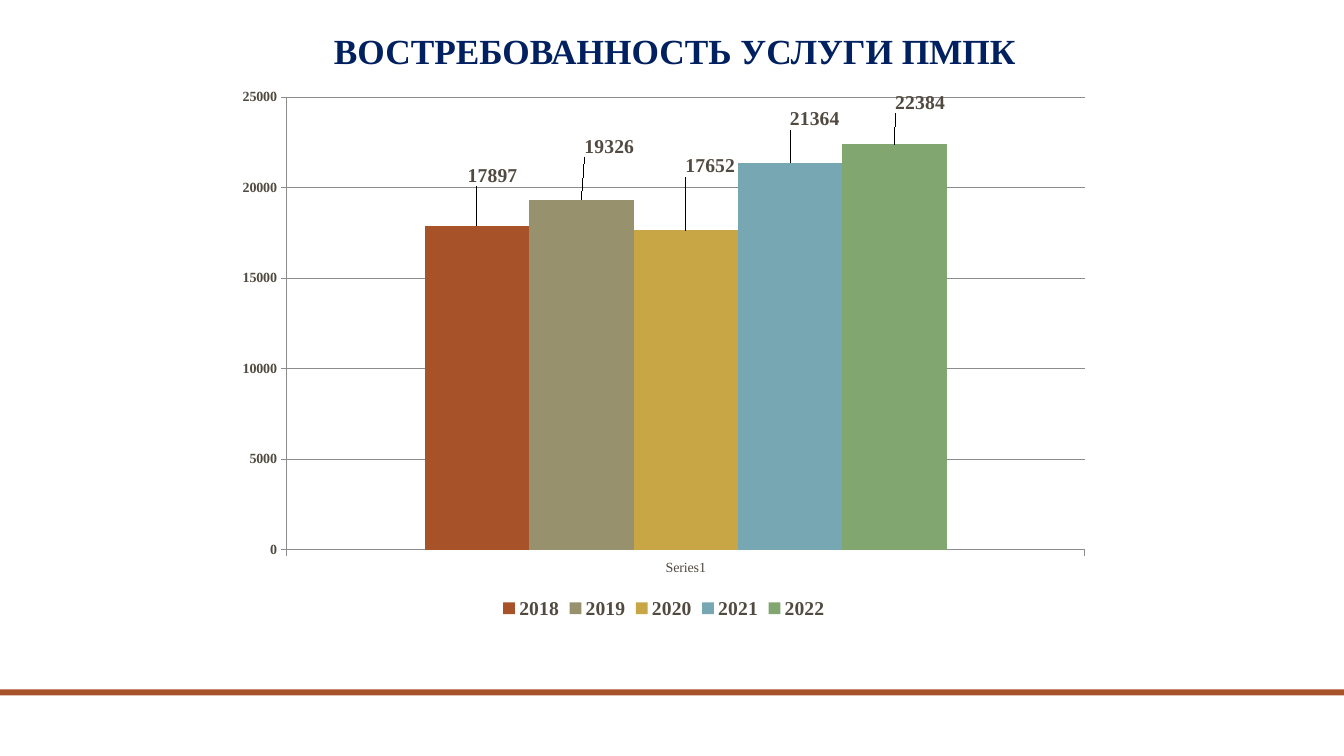
from lxml.etree import fromstring
from pptx import Presentation
from pptx.chart.data import CategoryChartData
from pptx.dml.color import RGBColor
from pptx.enum.chart import XL_CHART_TYPE, XL_LABEL_POSITION, XL_LEGEND_POSITION, XL_TICK_MARK
from pptx.enum.shapes import MSO_SHAPE
from pptx.enum.text import MSO_ANCHOR, PP_ALIGN
from pptx.oxml.ns import nsdecls
from pptx.util import Inches, Pt

COLORS = {"title": "002060", "rust": "A85229", "text": "514A40", "axis": "8C8C8C"}
FONT_NAME = "Times New Roman"
DEMAND = [
    ("2018", 17897, "A85229", 0.018, -0.064),
    ("2019", 19326, "98916E", 0.032, -0.07),
    ("2020", 17652, "C9A645", 0.028, -0.09),
    ("2021", 21364, "76A7B2", 0.028, -0.053),
    ("2022", 22384, "82A670", 0.029, -0.05),
]


def format_font(font, size, color, bold):
    values = {"name": FONT_NAME, "size": Pt(size), "bold": bold}
    for name, value in values.items():
        setattr(font, name, value)
    font.color.rgb = RGBColor.from_string(COLORS[color])


def make_layout(inner=False, **lengths):
    target = '<c:layoutTarget val="inner"/>' if inner else ""
    modes = "" if "w" not in lengths else '<c:xMode val="edge"/><c:yMode val="edge"/>'
    sizes = "".join(f'<c:{name} val="{value}"/>' for name, value in lengths.items())
    return fromstring(
        f'<c:layout {nsdecls("c")}><c:manualLayout>{target}{modes}{sizes}'
        "</c:manualLayout></c:layout>"
    )


deck = Presentation()
deck.slide_width = Inches(13.33)
deck.slide_height = Inches(7.5)
page = deck.slides.add_slide(deck.slide_layouts[5])

stripe = page.shapes.add_shape(
    MSO_SHAPE.RECTANGLE, Inches(0), Inches(6.84), Inches(13.33), Inches(0.06)
)
stripe.shadow.inherit = False
stripe.fill.solid()
stripe.fill.fore_color.rgb = RGBColor.from_string(COLORS["rust"])
stripe.line.fill.background()

title = page.shapes.title
title_place = {"left": 2.57, "top": 0.31, "width": 8.25, "height": 0.46}
for name, value in title_place.items():
    setattr(title, name, Inches(value))
frame = title.text_frame
frame_format = {
    "word_wrap": True, "vertical_anchor": MSO_ANCHOR.BOTTOM,
    "margin_top": Inches(0.05), "margin_bottom": Inches(0.05),
}
for name, value in frame_format.items():
    setattr(frame, name, value)
para = frame.paragraphs[0]
para.alignment = PP_ALIGN.CENTER
para.line_spacing = 0.9
span = para.add_run()
span.text = "ВОСТРЕБОВАННОСТЬ УСЛУГИ ПМПК"
format_font(span.font, 25.2, "title", True)

chart_data = CategoryChartData()
chart_data.categories = ["Series1"]
for year, count, *_ in DEMAND:
    chart_data.add_series(year, [count])
chart = page.shapes.add_chart(
    XL_CHART_TYPE.COLUMN_CLUSTERED,
    Inches(2.23), Inches(0.77), Inches(8.71), Inches(5.42), chart_data,
).chart
chart.has_title = False
format_font(chart.font, 10, "text", False)
plot = chart.plots[0]
plot.vary_by_categories = False
plot.gap_width = 264
plot.overlap = 0

value_axis = chart.value_axis
axis_format = {
    "minimum_scale": 0, "maximum_scale": 25000, "major_unit": 5000,
    "has_major_gridlines": True,
}
for name, value in axis_format.items():
    setattr(value_axis, name, value)
format_font(value_axis.tick_labels.font, 10, "text", True)
format_font(chart.category_axis.tick_labels.font, 10, "text", False)
for axis in (value_axis, chart.category_axis):
    axis.major_tick_mark = XL_TICK_MARK.OUTSIDE
for lined in (value_axis, chart.category_axis, value_axis.major_gridlines):
    lined.format.line.color.rgb = RGBColor.from_string(COLORS["axis"])
    lined.format.line.width = Pt(0.75)

chart.has_legend = True
chart.legend.position = XL_LEGEND_POSITION.BOTTOM
chart.legend.include_in_layout = False
format_font(chart.legend.font, 14, "text", True)

for series, (year, count, color, shift_x, shift_y) in zip(plot.series, DEMAND):
    series.format.fill.solid()
    series.format.fill.fore_color.rgb = RGBColor.from_string(color)
    label = series.points[0].data_label
    format_font(label.font, 14, "text", True)
    label.position = XL_LABEL_POSITION.OUTSIDE_END

chart_space = chart._chartSpace
for index, (year, count, color, shift_x, shift_y) in zip(chart_space.xpath(".//c:dLbl/c:idx"), DEMAND):
    index.addnext(make_layout(x=shift_x, y=shift_y))

chart_space.xpath(".//c:ser[1]/c:dLbls")[0].append(fromstring(
    f'<c:extLst {nsdecls("c")}><c:ext uri="{{CE6537A1-D6FC-4f65-9D91-7224C49458BB}}" '
    'xmlns:c15="http://schemas.microsoft.com/office/drawing/2012/chart">'
    '<c15:showLeaderLines val="1"/></c:ext></c:extLst>'
))

plot_area = chart_space.xpath(".//c:plotArea")[0]
for old_layout in chart_space.xpath(".//c:plotArea/c:layout | .//c:legend/c:layout"):
    old_layout.getparent().remove(old_layout)
plot_area.insert(0, make_layout(True, x=0.07, y=0.035, w=0.91, h=0.83))
chart_space.xpath(".//c:legend/c:legendPos")[0].addnext(
    make_layout(x=0.305, y=0.945, w=0.39, h=0.055)
)
chart_space.xpath("./c:chart")[0].addnext(fromstring(
    f'<c:spPr {nsdecls("c", "a")}><a:noFill/><a:ln w="9525"><a:solidFill>'
    '<a:srgbClr val="FFFFFF"/></a:solidFill></a:ln></c:spPr>'
))

deck.save("out.pptx")
